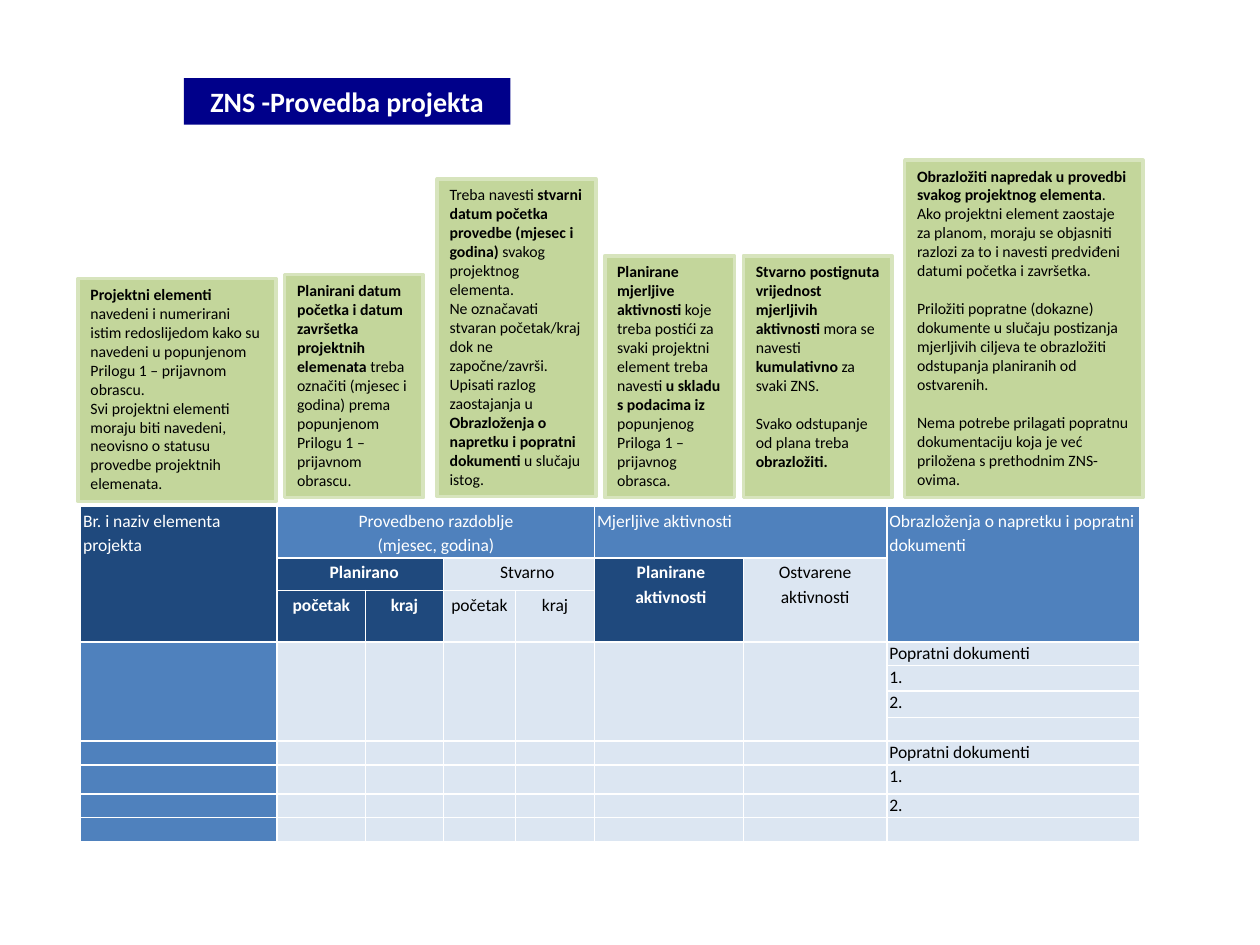
from dataclasses import dataclass

from lxml.etree import SubElement
from pptx import Presentation
from pptx.dml.color import RGBColor
from pptx.enum.shapes import MSO_SHAPE
from pptx.enum.text import MSO_ANCHOR, MSO_AUTO_SIZE, PP_ALIGN as ALIGN
from pptx.oxml.ns import qn
from pptx.util import Inches, Pt


@dataclass(frozen=True)
class Theme:
    font: str = "Calibri"
    white: str = "FFFFFF"
    black: str = "000000"
    banner: str = "00008A"
    note: str = "C3D69B"
    note_line: str = "D7E4BD"
    dark: str = "1F497D"
    medium: str = "4F81BD"
    light: str = "DCE6F2"
    title_size: int = 16
    table_size: int = 10
    note_size: int = 9
    note_gap: int = 11


class SlideBuilder:
    def __init__(self, prs, theme):
        self.theme = theme
        self.slide = prs.slides.add_slide(prs.slide_layouts[5])

    def style(self, font, size, color, bold=False):
        font.name = self.theme.font
        font.size = Pt(size)
        font.bold = bold
        font.color.rgb = RGBColor.from_string(color)

    def fill(self, target, color):
        target.fill.solid()
        target.fill.fore_color.rgb = RGBColor.from_string(color)

    def title(self, text, left, top, width, height):
        t = self.theme
        s = self.slide.shapes.title
        s.left, s.top = Inches(left), Inches(top)
        s.width, s.height = Inches(width), Inches(height)
        self.fill(s, t.banner)
        tf = s.text_frame
        tf.text = text
        tf.word_wrap = True
        tf.auto_size = MSO_AUTO_SIZE.NONE
        tf.vertical_anchor = MSO_ANCHOR.TOP
        p = tf.paragraphs[0]
        p.alignment = ALIGN.CENTER
        self.style(p.runs[0].font, t.title_size, t.white, True)

    def note(self, box, paragraphs, gap=0):
        t = self.theme
        s = self.slide.shapes.add_shape(MSO_SHAPE.RECTANGLE, *map(Inches, box))
        s.shadow.inherit = False
        self.fill(s, t.note)
        s.line.color.rgb = RGBColor.from_string(t.note_line)
        s.line.width = Pt(2)
        tf = s.text_frame
        tf.word_wrap = True
        tf.auto_size = MSO_AUTO_SIZE.SHAPE_TO_FIT_TEXT
        tf.vertical_anchor = MSO_ANCHOR.TOP
        for i, runs in enumerate(paragraphs):
            p = tf.add_paragraph() if i else tf.paragraphs[0]
            p.alignment = ALIGN.LEFT
            if i:
                p.space_before = Pt(gap)
            for text, bold in runs:
                r = p.add_run()
                r.text = text
                self.style(r.font, t.note_size, t.black, bold)

    def table(self, left, top, cols, rows):
        frame = self.slide.shapes.add_table(
            len(rows), len(cols), Inches(left), Inches(top),
            Inches(sum(cols)), Inches(sum(rows)))
        table = frame.table
        for column, width in zip(table.columns, cols):
            column.width = Inches(width)
        for row, height in zip(table.rows, rows):
            row.height = Inches(height)
        for r in range(len(rows)):
            for c in range(len(cols)):
                first = c == 0 and r > 2
                self.cell(table.cell(r, c), self.theme.medium if first else self.theme.light)
        return table

    def cell(self, cell, color):
        cell.margin_left = cell.margin_right = Inches(0.02)
        cell.margin_top = cell.margin_bottom = Inches(0.01)
        end = cell.text_frame.paragraphs[0]._p.get_or_add_endParaRPr()
        end.set("sz", str(self.theme.table_size * 100))
        tc_pr = cell._tc.get_or_add_tcPr()
        for side in "LRTB":
            ln = SubElement(tc_pr, qn(f"a:ln{side}"), w=str(Pt(1)))
            solid = SubElement(ln, qn("a:solidFill"))
            SubElement(solid, qn("a:srgbClr"), val=self.theme.white)
        self.fill(cell, color)

    def cell_text(self, cell, text, color, bold=False, align=ALIGN.LEFT, indent=0.02):
        cell.text = text
        cell.margin_left = Inches(indent)
        for p in cell.text_frame.paragraphs:
            p.alignment = align
            for r in p.runs:
                self.style(r.font, self.theme.table_size, color, bold)

    def header(self, table, row, col, text, span, color, bold=False, align=ALIGN.CENTER, indent=0.02):
        t = self.theme
        cell = table.cell(row, col)
        if span != (1, 1):
            cell.merge(table.cell(row + span[0] - 1, col + span[1] - 1))
        self.fill(cell, color)
        self.cell_text(cell, text, t.black if color == t.light else t.white, bold, align, indent)
        p = cell.text_frame.paragraphs[0]
        p.line_spacing = 1.15
        p.space_after = Pt(10)


NOTES = [
    ((0.62, 2.21, 1.57, 1.77), 0, [
        [("Projektni elementi ", True),
         ("navedeni i numerirani istim redoslijedom kako su navedeni u popunjenom Prilogu 1 – prijavnom obrascu.", False)],
        [("Svi projektni elementi moraju biti navedeni, neovisno o statusu provedbe projektnih elemenata.", False)]]),
    ((2.26, 2.18, 1.1, 1.77), 0, [
        [("Planirani datum početka i datum završetka projektnih elemenata ", True),
         ("treba označiti (mjesec i godina) prema popunjenom Prilogu 1 – prijavnom obrascu.", False)]]),
    ((3.47, 1.42, 1.26, 2.52), 0, [
        [("Treba navesti ", False),
         ("stvarni datum početka provedbe (mjesec i godina) ", True),
         ("svakog projektnog elementa.", False)],
        [("Ne označavati stvaran početak/kraj dok ne započne/završi.", False)],
        [("Upisati razlog zaostajanja u ", False),
         ("Obrazloženja o napretku i popratni dokumenti ", True),
         ("u slučaju istog.", False)]]),
    ((4.8, 2.03, 1.03, 1.92), 0, [
        [("Planirane mjerljive aktivnosti ", True),
         ("koje treba postići za svaki projektni element treba navesti ", False),
         ("u skladu s podacima iz ", True),
         ("popunjenog Priloga 1 – prijavnog obrasca.", False)]]),
    ((5.9, 2.03, 1.18, 1.92), Theme.note_gap, [
        [("Stvarno postignuta vrijednost mjerljivih aktivnosti ", True),
         ("mora se navesti ", False), ("kumulativno ", True), ("za svaki ZNS.", False)],
        [("Svako odstupanje od plana treba ", False), ("obrazložiti.", True)]]),
    ((7.18, 1.27, 1.89, 2.68), Theme.note_gap, [
        [("Obrazložiti napredak u provedbi svakog projektnog elementa", True),
         (". Ako projektni element zaostaje za planom, moraju se objasniti razlozi za to i navesti predviđeni datumi početka i završetka.", False)],
        [("Priložiti popratne (dokazne) dokumente u slučaju postizanja mjerljivih ciljeva te obrazložiti odstupanja planiranih od ostvarenih.", False)],
        [("Nema potrebe prilagati popratnu dokumentaciju koja je već priložena s prethodnim ZNS-ovima.", False)]]),
]

COLS = [1.56, 0.7, 0.62, 0.57, 0.63, 1.18, 1.14, 2.01]
ROWS = [0.39, 0.26, 0.4, 0.18, 0.2, 0.21, 0.18, 0.18, 0.23, 0.18, 0.18]
DOCUMENTS = ["Popratni dokumenti", "1.", "2."]


def main():
    theme = Theme()
    prs = Presentation()
    prs.slide_width, prs.slide_height = Inches(10), Inches(7.5)
    builder = SlideBuilder(prs, theme)
    dark, medium, light = theme.dark, theme.medium, theme.light

    table = builder.table(0.64, 4.02, COLS, ROWS)
    headers = [
        (0, 0, "Br. i naziv elementa projekta", (3, 1), dark, False, ALIGN.LEFT),
        (0, 1, "Provedbeno razdoblje\v(mjesec, godina)", (1, 4), medium),
        (0, 5, "Mjerljive aktivnosti", (1, 2), medium, False, ALIGN.LEFT),
        (0, 7, "Obrazloženja o napretku i popratni dokumenti", (3, 1), medium, False, ALIGN.LEFT),
        (1, 1, "Planirano", (1, 2), dark, True, ALIGN.CENTER, 0.08),
        (1, 3, "Stvarno", (1, 2), light, False, ALIGN.CENTER, 0.15),
        (1, 5, "Planirane aktivnosti", (2, 1), dark, True, ALIGN.CENTER, 0.05),
        (1, 6, "Ostvarene aktivnosti", (2, 1), light),
        (2, 1, "početak", (1, 1), dark, True),
        (2, 2, "kraj", (1, 1), dark, True),
        (2, 3, "početak", (1, 1), light),
        (2, 4, "kraj", (1, 1), light),
    ]
    for item in headers:
        builder.header(table, *item)
    for col in range(7):
        table.cell(3, col).merge(table.cell(6, col))
    for start in (3, 7):
        for offset, text in enumerate(DOCUMENTS):
            builder.cell_text(table.cell(start + offset, 7), text, theme.black)

    for box, gap, paragraphs in NOTES:
        builder.note(box, paragraphs, gap)
    builder.title("ZNS -Provedba projekta", 1.46, 0.62, 2.59, 0.37)
    prs.save("out.pptx")


if __name__ == "__main__":
    main()
